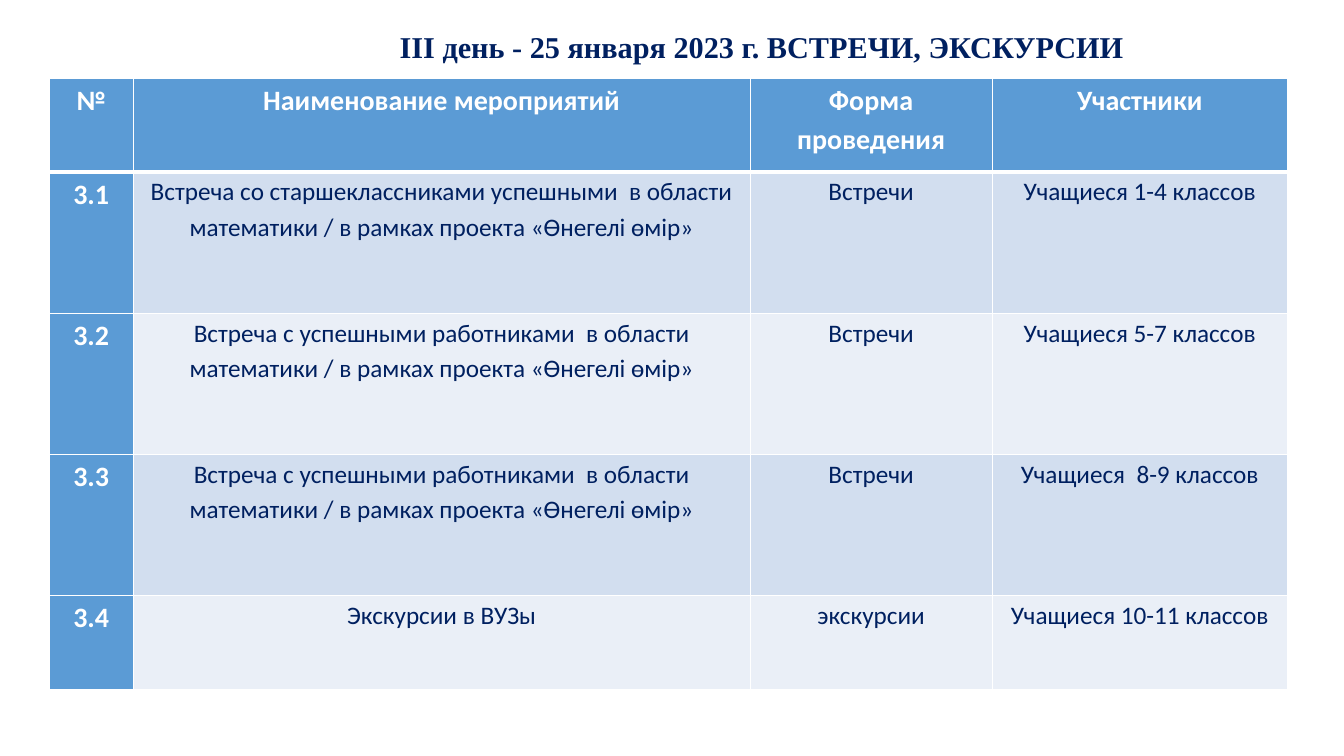
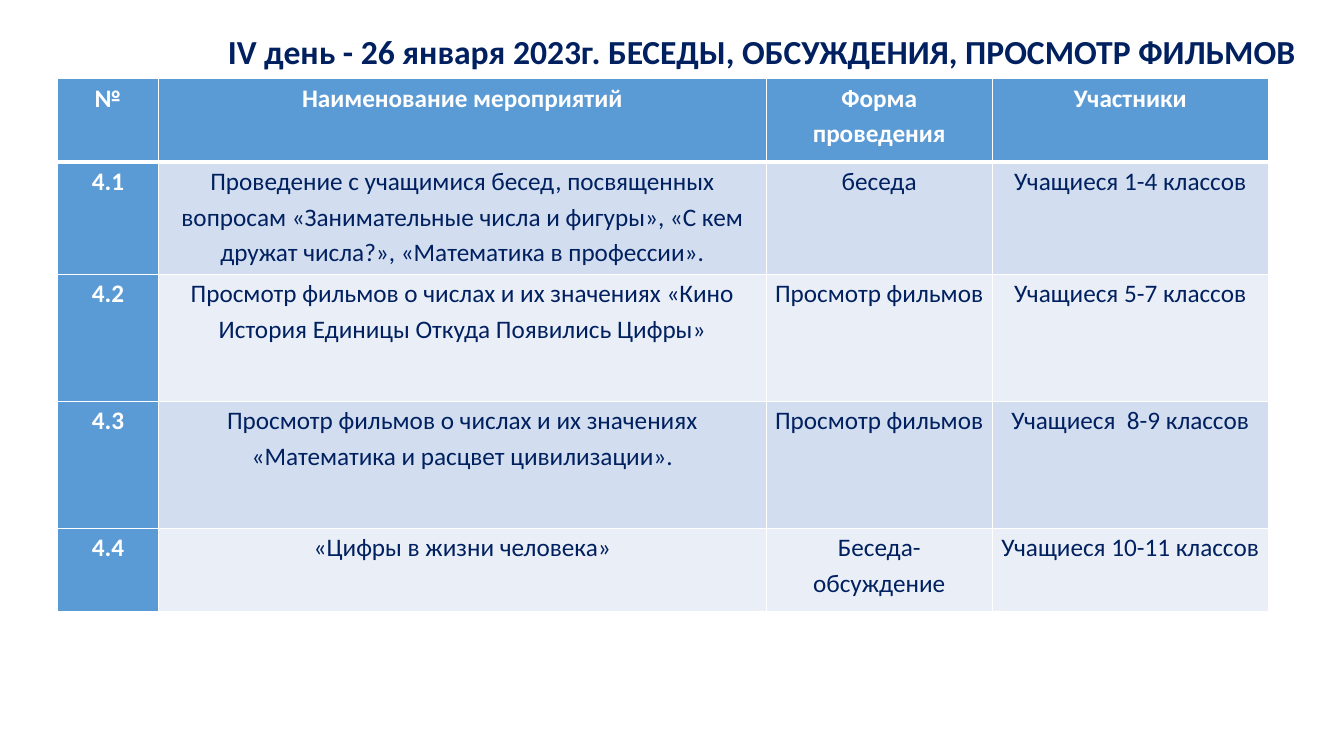
from lxml.etree import SubElement
from pptx import Presentation
from pptx.dml.color import RGBColor
from pptx.enum.text import MSO_ANCHOR, MSO_AUTO_SIZE, PP_ALIGN
from pptx.oxml.ns import qn
from pptx.util import Inches, Pt

NAVY = RGBColor(0x00, 0x20, 0x60)
BLUE = RGBColor(0x5B, 0x9B, 0xD5)
BAND_DARK = RGBColor(0xD2, 0xDE, 0xEF)
BAND_LIGHT = RGBColor(0xEA, 0xEF, 0xF7)
WHITE = RGBColor(0xFF, 0xFF, 0xFF)

TABLE_FONT = "Calibri"
BODY_SIZE = 18
TITLE_LEFT, TITLE_WIDTH = 2.09, 10.93
TABLE_TOP = 0.78
HEADER = ("№", "Наименование мероприятий", "Форма проведения", "Участники")

DAYS = [
    {
        "title": "ІІІ день - 25 января 2023 г. ВСТРЕЧИ, ЭКСКУРСИИ",
        "title_font": "Times New Roman",
        "title_size": 21.6,
        "title_top": 0.3,
        "title_height": 0.37,
        "table_left": 0.49,
        "columns": (0.83, 6.12, 2.4, 2.93),
        "row_heights": (0.93, 1.4, 1.4, 1.4, 0.93),
        "heading_size": 20,
        "events": [
            ("3.1", "Встреча со старшеклассниками успешными  в области математики / в рамках проекта «Өнегелі өмір»",
             "Встречи", "Учащиеся 1-4 классов"),
            ("3.2", "Встреча с успешными работниками  в области математики / в рамках проекта «Өнегелі өмір»",
             "Встречи", "Учащиеся 5-7 классов"),
            ("3.3", "Встреча с успешными работниками  в области математики / в рамках проекта «Өнегелі өмір»",
             "Встречи", "Учащиеся  8-9 классов"),
            ("3.4", "Экскурсии в ВУЗы", "экскурсии", "Учащиеся 10-11 классов"),
        ],
    },
    {
        "title": "IV день - 26 января 2023г. БЕСЕДЫ, ОБСУЖДЕНИЯ, ПРОСМОТР ФИЛЬМОВ",
        "title_font": "Calibri",
        "title_size": 24,
        "title_top": 0.1,
        "title_height": 0.86,
        "table_left": 0.57,
        "columns": (1, 6.03, 2.24, 2.74),
        "row_heights": (0.83, 1.11, 1.26, 1.26, 0.83),
        "heading_size": 18,
        "events": [
            ("4.1", "Проведение с учащимися бесед, посвященных вопросам «Занимательные числа и фигуры», "
             "«С кем дружат числа?», «Математика в профессии».",
             "беседа", "Учащиеся 1-4 классов"),
            ("4.2", "Просмотр фильмов о числах и их значениях «Кино История Единицы Откуда Появились Цифры»",
             "Просмотр фильмов", "Учащиеся 5-7 классов"),
            ("4.3", "Просмотр фильмов о числах и их значениях «Математика и расцвет цивилизации».",
             "Просмотр фильмов", "Учащиеся  8-9 классов"),
            ("4.4", "«Цифры в жизни человека»", "Беседа-обсуждение", "Учащиеся 10-11 классов"),
        ],
    },
]


def write_centred(paragraph, text, font_name, size, color, bold, line_spacing):
    paragraph.alignment = PP_ALIGN.CENTER
    paragraph.line_spacing = line_spacing
    run = paragraph.add_run()
    run.text = text
    run.font.name = font_name
    run.font.size = Pt(size)
    run.font.bold = bold
    run.font.color.rgb = color


def add_title(slide, day):
    title = slide.shapes.title
    title.left, title.top = Inches(TITLE_LEFT), Inches(day["title_top"])
    title.width, title.height = Inches(TITLE_WIDTH), Inches(day["title_height"])
    frame = title.text_frame
    frame.word_wrap = True
    frame.auto_size = MSO_AUTO_SIZE.NONE
    frame.vertical_anchor = MSO_ANCHOR.MIDDLE
    write_centred(frame.paragraphs[0], day["title"], day["title_font"],
                  day["title_size"], NAVY, True, 0.9)


def set_borders(cell, row_index):
    widths = {
        "a:lnL": 1,
        "a:lnR": 1,
        "a:lnT": 3 if row_index == 1 else 1,
        "a:lnB": 3 if row_index == 0 else 1,
    }
    properties = cell._tc.get_or_add_tcPr()
    for tag, width in widths.items():
        line = SubElement(properties, qn(tag), w=str(Pt(width)))
        fill = SubElement(line, qn("a:solidFill"))
        SubElement(fill, qn("a:srgbClr"), val=str(WHITE))


def format_cell(cell, text, row_index, column_index, heading_size):
    heading = row_index == 0 or column_index == 0
    band = BAND_DARK if row_index % 2 else BAND_LIGHT
    cell.margin_left = cell.margin_right = Inches(0.07)
    cell.margin_top = cell.margin_bottom = 0
    set_borders(cell, row_index)
    cell.fill.solid()
    cell.fill.fore_color.rgb = BLUE if heading else band
    paragraph = cell.text_frame.paragraphs[0]
    paragraph.space_after = Pt(10)
    write_centred(paragraph, text, TABLE_FONT, heading_size if heading else BODY_SIZE,
                  WHITE if heading else NAVY, heading, 1.15)


def add_schedule(slide, day):
    rows = [HEADER] + day["events"]
    columns, heights = day["columns"], day["row_heights"]
    table = slide.shapes.add_table(
        len(rows), len(columns), Inches(day["table_left"]), Inches(TABLE_TOP),
        Inches(sum(columns)), Inches(sum(heights))).table
    for column, width in zip(table.columns, columns):
        column.width = Inches(width)
    for row, height in zip(table.rows, heights):
        row.height = Inches(height)
    for row_index, texts in enumerate(rows):
        for column_index, text in enumerate(texts):
            format_cell(table.cell(row_index, column_index), text,
                        row_index, column_index, day["heading_size"])


def main():
    presentation = Presentation()
    presentation.slide_width, presentation.slide_height = Inches(13.33), Inches(7.5)
    title_only = presentation.slide_layouts[5]
    for day in DAYS:
        slide = presentation.slides.add_slide(title_only)
        add_title(slide, day)
        add_schedule(slide, day)
    presentation.save("out.pptx")


if __name__ == "__main__":
    main()
